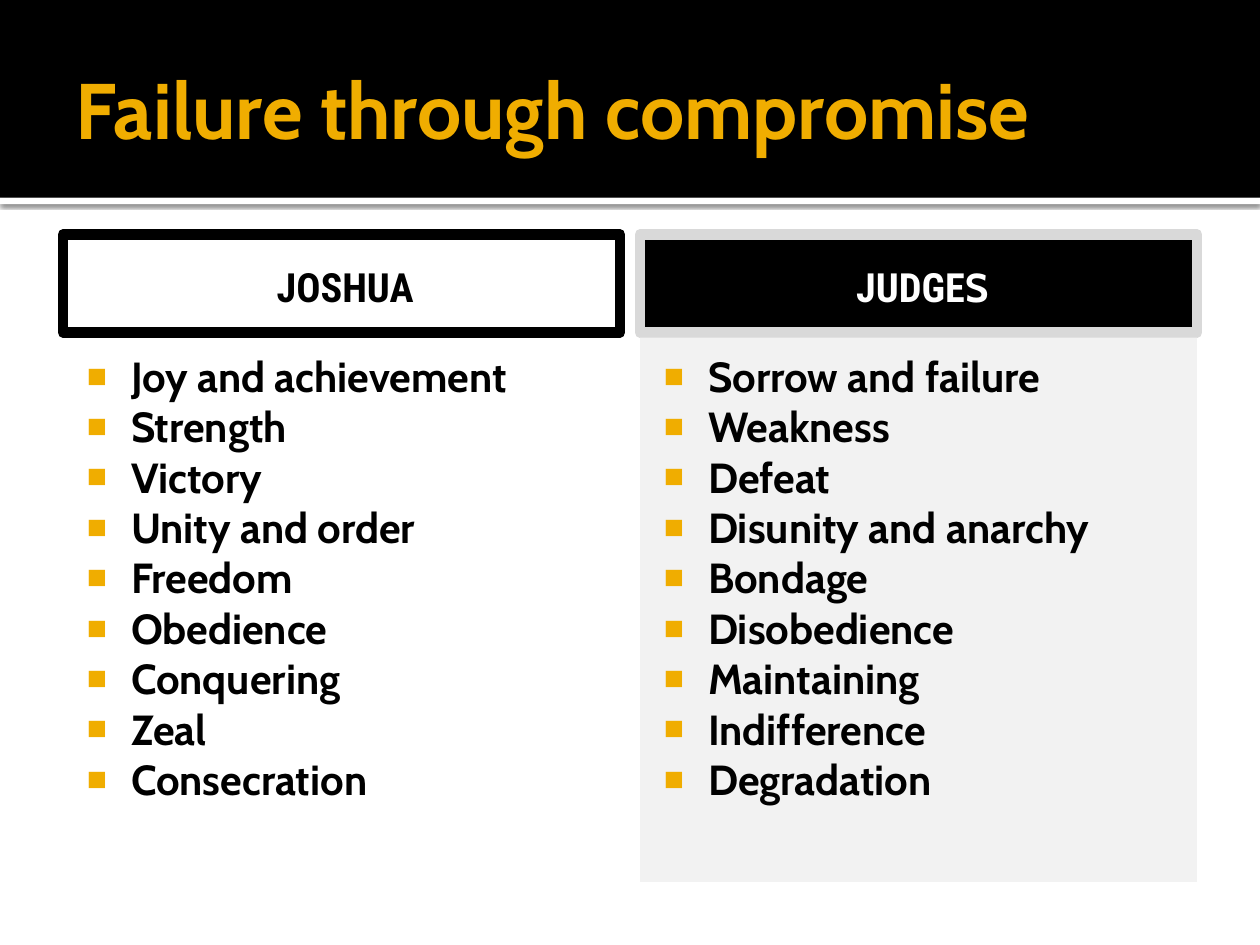
from lxml import etree
from pptx import Presentation
from pptx.dml.color import RGBColor
from pptx.enum.shapes import MSO_SHAPE
from pptx.enum.text import MSO_ANCHOR, MSO_AUTO_SIZE, PP_ALIGN
from pptx.oxml import parse_xml
from pptx.oxml.ns import nsdecls, qn
from pptx.util import Inches, Pt

RECTANGLE = MSO_SHAPE.RECTANGLE
TOP, MIDDLE = MSO_ANCHOR.TOP, MSO_ANCHOR.MIDDLE
LEFT, CENTER = PP_ALIGN.LEFT, PP_ALIGN.CENTER
NO_AUTOFIT = MSO_AUTO_SIZE.NONE

BLACK = RGBColor(0x00, 0x00, 0x00)
WHITE = RGBColor(0xFF, 0xFF, 0xFF)
GOLD = RGBColor(0xF0, 0xAD, 0x00)
SILVER = RGBColor(0xD9, 0xD9, 0xD9)
PALE_GRAY = RGBColor(0xF2, 0xF2, 0xF2)

BODY_FONT = "Cabin"
HEADING_FONT = "Roboto Condensed"
COMPARISON_LAYOUT = 4

COLUMN_WIDTH, COLUMN_GAP = 4.42, 0.16
MARGIN, COLUMN_TOP = 0.5, 1.86
HEADING_HEIGHT, LIST_OFFSET, LIST_HEIGHT = 0.78, 0.82, 4.32

COLUMNS = [
    {
        "heading": [("JOSHUA", HEADING_FONT)],
        "colors": {"fill": None, "line": BLACK, "text": BLACK, "list": None},
        "items": ["Joy and achievement", "Strength", "Victory",
                  "Unity and order", "Freedom", "Obedience", "Conquering",
                  "Zeal", "Consecration"],
    },
    {
        "heading": [("JUDGE", HEADING_FONT), ("S", BODY_FONT)],
        "colors": {"fill": BLACK, "line": SILVER, "text": WHITE,
                   "list": PALE_GRAY},
        "items": ["Sorrow and failure", "Weakness", "Defeat",
                  "Disunity and anarchy", "Bondage", "Disobedience",
                  "Maintaining", "Indifference", "Degradation"],
    },
]


def set_values(target, values):
    for name, value in values.items():
        setattr(target, name, value)


def place(shape, box, fill=None):
    names = ("left", "top", "width", "height")
    set_values(shape, dict(zip(names, map(Inches, box))))
    if fill is not None:
        shape.fill.solid()
        shape.fill.fore_color.rgb = fill


def format_frame(frame, insets, anchor):
    names = ("margin_left", "margin_top", "margin_right", "margin_bottom")
    values = dict(zip(names, map(Inches, insets)))
    values.update(vertical_anchor=anchor, word_wrap=True, auto_size=NO_AUTOFIT)
    set_values(frame, values)


def add_span(para, text, font, size, color):
    span = para.add_run()
    span.text = text
    set_values(span.font, {"name": font, "size": Pt(size), "bold": True})
    span.font.color.rgb = color


def add_bullet(para):
    properties = para._p.get_or_add_pPr()
    properties.set("marL", str(Inches(0.48)))
    properties.set("indent", str(Inches(-0.35)))
    color = etree.SubElement(properties, qn("a:buClr"))
    etree.SubElement(color, qn("a:srgbClr"), val=str(GOLD))
    etree.SubElement(properties, qn("a:buSzPct"), val="80000")
    etree.SubElement(properties, qn("a:buFont"), typeface="Arial")
    etree.SubElement(properties, qn("a:buChar"), char="■")


def add_soft_shadow(shape):
    shape._element.spPr.append(parse_xml(
        f'<a:effectLst {nsdecls("a")}>'
        f'<a:outerShdw blurRad="{Pt(2.5)}" dist="{Pt(0.8)}" dir="5400000">'
        '<a:srgbClr val="000000"><a:alpha val="60000"/></a:srgbClr>'
        '</a:outerShdw></a:effectLst>'))


def build_header(page, width, height):
    # White strip with a shadow, then the black band, both behind the title
    strip_box = (0, height, width, 0.05)
    band_box = (0, 0, width, height)
    bands = []
    for position, (box, fill) in enumerate([(strip_box, WHITE), (band_box, BLACK)]):
        band = page.shapes.add_shape(RECTANGLE, *map(Inches, box))
        place(band, box, fill)
        band.line.fill.background()
        page.shapes._spTree.insert(2 + position, band._element)
        bands.append(band)
    add_soft_shadow(bands[0])
    bands[1].shadow.inherit = False

    # Title
    title = page.shapes.title
    place(title, (MARGIN, 0.17, 9, 1.37))
    format_frame(title.text_frame, (0.1, 0.05, 0.05, 0.05), MIDDLE)
    para = title.text_frame.paragraphs[0]
    para.alignment = LEFT
    add_span(para, "Failure through compromise", BODY_FONT, 45, GOLD)


def build_column(heading, listing, left, top, column):
    colors = column["colors"]

    # Framed heading
    place(heading, (left, top, COLUMN_WIDTH, HEADING_HEIGHT), colors["fill"])
    heading.line.color.rgb = colors["line"]
    heading.line.width = Pt(6)
    etree.SubElement(heading.line._ln, qn("a:round"))
    format_frame(heading.text_frame, (0.16, 0.1, 0.1, 0.05), MIDDLE)
    para = heading.text_frame.paragraphs[0]
    set_values(para, {"alignment": CENTER, "space_before": Pt(0)})
    for text, font in column["heading"]:
        add_span(para, text, font, 23, colors["text"])

    # Bulleted list
    place(listing, (left, top + LIST_OFFSET, COLUMN_WIDTH, LIST_HEIGHT),
          colors["list"])
    frame = listing.text_frame
    format_frame(frame, (0.06, 0.1, 0.1, 0.05), TOP)
    for index, item in enumerate(column["items"]):
        para = frame.add_paragraph() if index else frame.paragraphs[0]
        set_values(para, {"alignment": LEFT, "space_before": Pt(0),
                          "line_spacing": 1.0})
        add_bullet(para)
        add_span(para, item, BODY_FONT, 24, BLACK)


def main():
    deck = Presentation()
    set_values(deck, {"slide_width": Inches(10), "slide_height": Inches(7.5)})
    page = deck.slides.add_slide(deck.slide_layouts[COMPARISON_LAYOUT])
    build_header(page, 10, 1.57)
    holders = {holder.placeholder_format.idx: holder
               for holder in page.placeholders}
    for index, column in enumerate(COLUMNS):
        left = MARGIN + index * (COLUMN_WIDTH + COLUMN_GAP)
        build_column(holders[2 * index + 1], holders[2 * index + 2],
                     left, COLUMN_TOP, column)
    deck.save("out.pptx")


if __name__ == "__main__":
    main()
